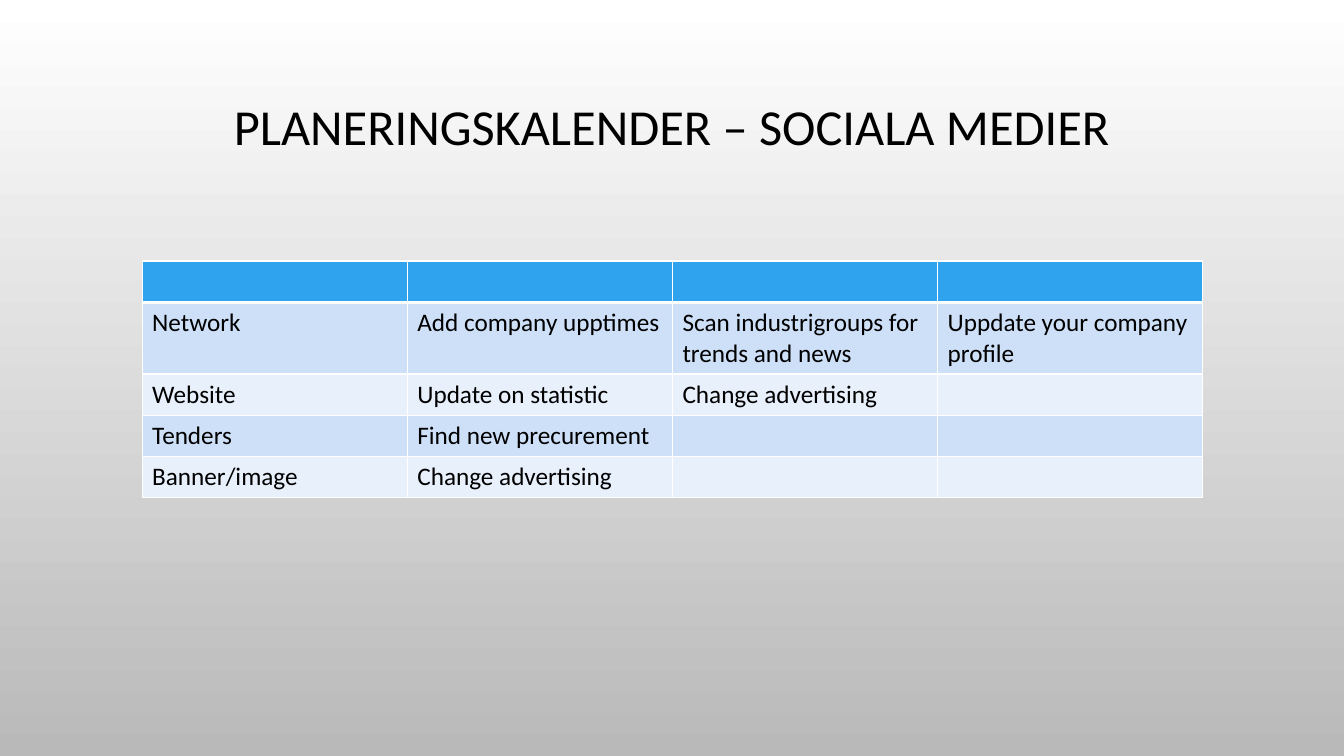
import dataclasses

import pptx
import pptx.dml.color
import pptx.enum.text
import pptx.oxml
import pptx.oxml.ns
import pptx.util
from pptx.util import Inches


@dataclasses.dataclass(frozen=True)
class Theme:
    font: str = "Calibri"
    title_size: int = 36
    body_size: int = 18
    text: str = "000000"
    background_top: str = "FFFFFF"
    background_bottom: str = "B9B9B9"
    header: str = "2FA3EE"
    bands: tuple = ("CDE0F8", "E8F0FC")
    border: str = "FFFFFF"


THEME = Theme()

CALENDAR = [
    ("", "", "", ""),
    ("Network", "Add company upptimes", "Scan industrigroups for trends and news",
     "Uppdate your company profile"),
    ("Website", "Update on statistic", "Change advertising", ""),
    ("Tenders", "Find new precurement", "", ""),
    ("Banner/image", "Change advertising", "", ""),
]
ROW_HEIGHTS = (0.41, 0.71, 0.41, 0.41, 0.41)
COLUMN_WIDTH = 2.63


def rgb(value):
    return pptx.dml.color.RGBColor.from_string(value)


def style_font(font, size):
    font.name = THEME.font
    font.size = pptx.util.Pt(size)
    font.bold = False
    font.color.rgb = rgb(THEME.text)


def paint_background(slide):
    fill = slide.background.fill
    fill.gradient()
    fill.gradient_angle = 270
    colors = (THEME.background_top, THEME.background_bottom)
    for stop, color, position in zip(fill.gradient_stops, colors, (0, 1)):
        stop.color.rgb = rgb(color)
        stop.position = position


def add_title(slide, text):
    """Add the heading, lifted above the middle of its box by the bottom inset."""
    box = slide.shapes.add_textbox(Inches(1), Inches(0.68), Inches(11.33), Inches(1.75))
    frame = box.text_frame
    frame.word_wrap = True
    frame.vertical_anchor = pptx.enum.text.MSO_ANCHOR.MIDDLE
    frame.margin_bottom = Inches(0.6)
    frame.text = text
    paragraph = frame.paragraphs[0]
    paragraph.alignment = pptx.enum.text.PP_ALIGN.CENTER
    paragraph.line_spacing = 0.9
    style_font(paragraph.runs[0].font, THEME.title_size)


def set_borders(cell, bottom_width):
    """Draw 1 pt lines on three sides and a line of the given width below."""
    properties = cell._tc.get_or_add_tcPr()
    sides = (("lnL", 1), ("lnR", 1), ("lnT", 1), ("lnB", bottom_width))
    for index, (tag, width) in enumerate(sides):
        line = pptx.oxml.parse_xml(
            f'<a:{tag} {pptx.oxml.ns.nsdecls("a")} w="{pptx.util.Pt(width)}">'
            f'<a:solidFill><a:srgbClr val="{THEME.border}"/></a:solidFill></a:{tag}>'
        )
        properties.insert(index, line)


def fill_cell(cell, text, color, bottom_width):
    cell.fill.solid()
    cell.fill.fore_color.rgb = rgb(color)
    set_borders(cell, bottom_width)
    cell.text = text
    paragraph = cell.text_frame.paragraphs[0]
    style_font(paragraph.font, THEME.body_size)
    for run in paragraph.runs:
        style_font(run.font, THEME.body_size)


def add_calendar(slide):
    column_count = len(CALENDAR[0])
    table = slide.shapes.add_table(
        len(CALENDAR), column_count, Inches(1.41), Inches(2.59),
        Inches(COLUMN_WIDTH * column_count), Inches(sum(ROW_HEIGHTS)),
    ).table
    for column in table.columns:
        column.width = Inches(COLUMN_WIDTH)
    for row_index, texts in enumerate(CALENDAR):
        table.rows[row_index].height = Inches(ROW_HEIGHTS[row_index])
        is_header = row_index == 0
        color = THEME.header if is_header else THEME.bands[(row_index - 1) % 2]
        for column_index, text in enumerate(texts):
            cell = table.cell(row_index, column_index)
            fill_cell(cell, text, color, 3 if is_header else 1)


def main():
    presentation = pptx.Presentation()
    presentation.slide_width = Inches(13.33)
    presentation.slide_height = Inches(7.5)
    slide = presentation.slides.add_slide(presentation.slide_layouts[6])
    paint_background(slide)
    add_title(slide, "PLANERINGSKALENDER – SOCIALA MEDIER")
    add_calendar(slide)
    presentation.save("out.pptx")


if __name__ == "__main__":
    main()
